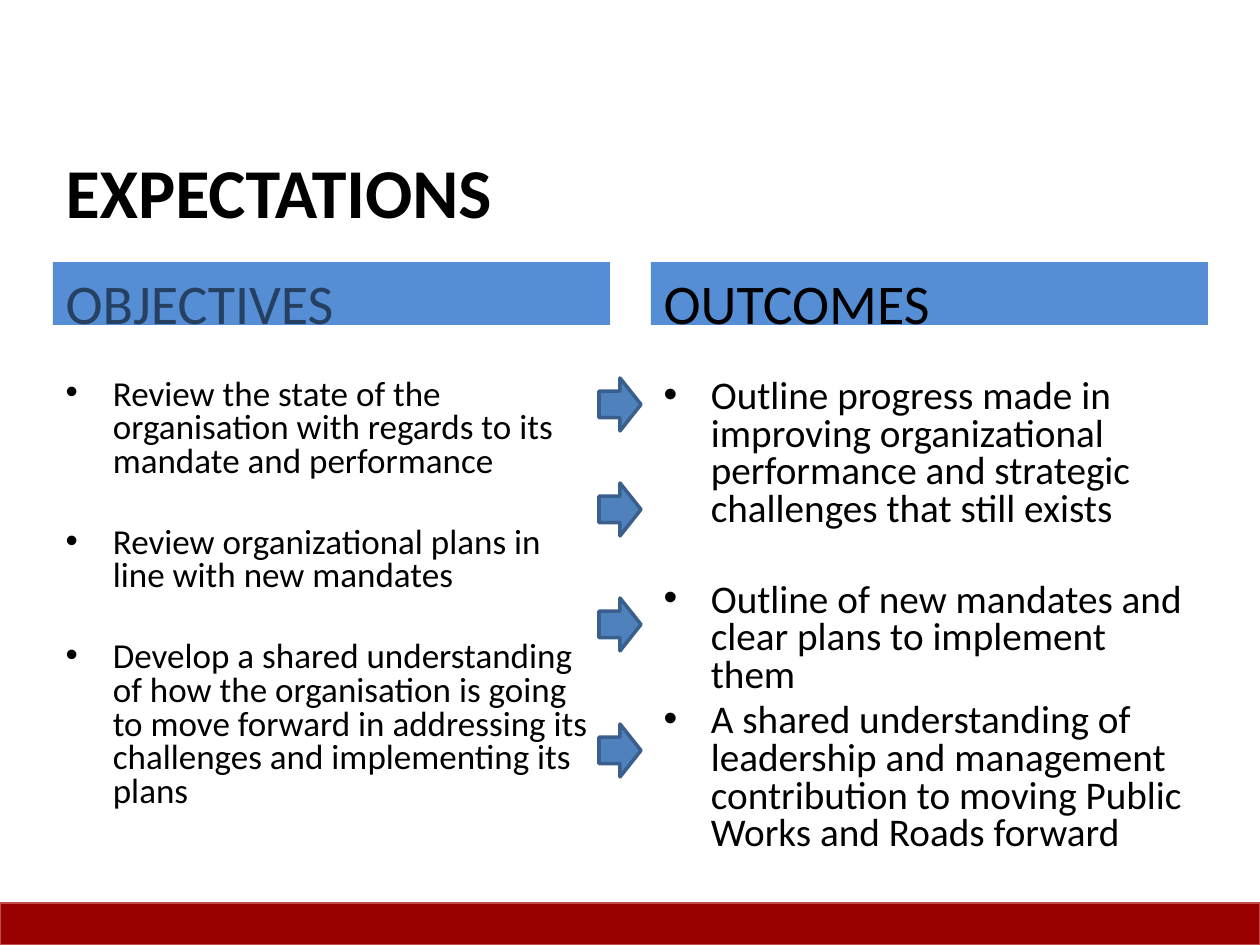
from pptx import Presentation
from pptx.dml.color import RGBColor
from pptx.enum.shapes import MSO_SHAPE
from pptx.enum.text import MSO_ANCHOR, MSO_AUTO_SIZE, PP_ALIGN
from pptx.util import Emu, Pt

RECTANGLE = MSO_SHAPE.RECTANGLE
RIGHT_ARROW = MSO_SHAPE.RIGHT_ARROW
TOP = MSO_ANCHOR.TOP
LEFT = PP_ALIGN.LEFT
NO_FIT = MSO_AUTO_SIZE.NONE

PX_PER_INCH = 126
PAGE_WIDTH, PAGE_HEIGHT = 1260, 945
FONT = "Calibri"
BLACK = "000000"
COMPARISON_LAYOUT = 4
HEADING_HEIGHT = 63
LIST_OFFSET = 111

OBJECTIVES = [
    ("Review the state of the organisation with regards to its mandate and performance", 0),
    ("Review organizational plans in line with new mandates", 27),
    ("Develop a shared understanding of how the organisation is going to move forward "
     "in addressing its challenges and implementing its plans", 27),
]
OUTCOMES = [
    ("Outline progress made in improving organizational performance and strategic "
     "challenges that still exists", 0),
    ("Outline of new mandates and clear plans to implement them", 30.5),
    ("A shared understanding of leadership and management contribution to moving "
     "Public Works and Roads forward", 4.5),
]


def px(length):
    return Emu(round(length * 914400 / PX_PER_INCH))


def color(code):
    return RGBColor.from_string(code)


def place(shape, box):
    shape.left, shape.top, shape.width, shape.height = map(px, box)


def write(shape, paragraphs, size, ink=BLACK, bold=False, spacing=1.0):
    frame = shape.text_frame
    frame.word_wrap = True
    frame.auto_size = NO_FIT
    frame.vertical_anchor = TOP
    for index, (text, gap) in enumerate(paragraphs):
        para = frame.add_paragraph() if index else frame.paragraphs[0]
        para.alignment = LEFT
        para.line_spacing = spacing
        para.space_before = Pt(gap)
        span = para.add_run()
        span.text = text
        span.font.name = FONT
        span.font.size = Pt(size)
        span.font.bold = bold
        span.font.color.rgb = color(ink)


def add_block(page, kind, box, fill, line, line_width):
    shape = page.shapes.add_shape(kind, *map(px, box))
    shape.shadow.inherit = False
    shape.fill.solid()
    shape.fill.fore_color.rgb = color(fill)
    shape.line.color.rgb = color(line)
    shape.line.width = Pt(line_width)


def add_footer(page, box):
    add_block(page, RECTANGLE, box, "990000", "BF4C48", 0.75)


def add_title(page, box):
    title = page.shapes.title
    place(title, box)
    write(title, [("EXPECTATIONS", 0)], 40, bold=True, spacing=0.8)


def add_column(heading, body, box, name, ink, items, size):
    left, top, width, height = box
    place(heading, (left, top, width, HEADING_HEIGHT))
    heading.fill.solid()
    heading.fill.fore_color.rgb = color("558ED5")
    write(heading, [(name, 0)], 32, ink)
    place(body, (left, top + LIST_OFFSET, width, height - LIST_OFFSET))
    write(body, items, size, spacing=0.8)


def add_arrows(page, box, offsets):
    left, top, width, height = box
    for offset in offsets:
        add_block(page, RIGHT_ARROW, (left, top + offset, width, height),
                  "4F81BD", "3A5F8C", 2)


def main():
    deck = Presentation()
    deck.slide_width, deck.slide_height = px(PAGE_WIDTH), px(PAGE_HEIGHT)
    page = deck.slides.add_slide(deck.slide_layouts[COMPARISON_LAYOUT])
    holders = page.placeholders
    add_footer(page, (0, 903, PAGE_WIDTH, 42))
    add_title(page, (53, 158, 1040, 116))
    add_column(holders[1], holders[2], (53, 262, 557, 598),
               "OBJECTIVES", "254061", OBJECTIVES, 20)
    add_column(holders[3], holders[4], (651, 262, 557, 608),
               "OUTCOMES", BLACK, OUTCOMES, 22.4)
    add_arrows(page, (599, 378, 42, 53), (0, 105, 220, 346))
    deck.save("out.pptx")


if __name__ == "__main__":
    main()
